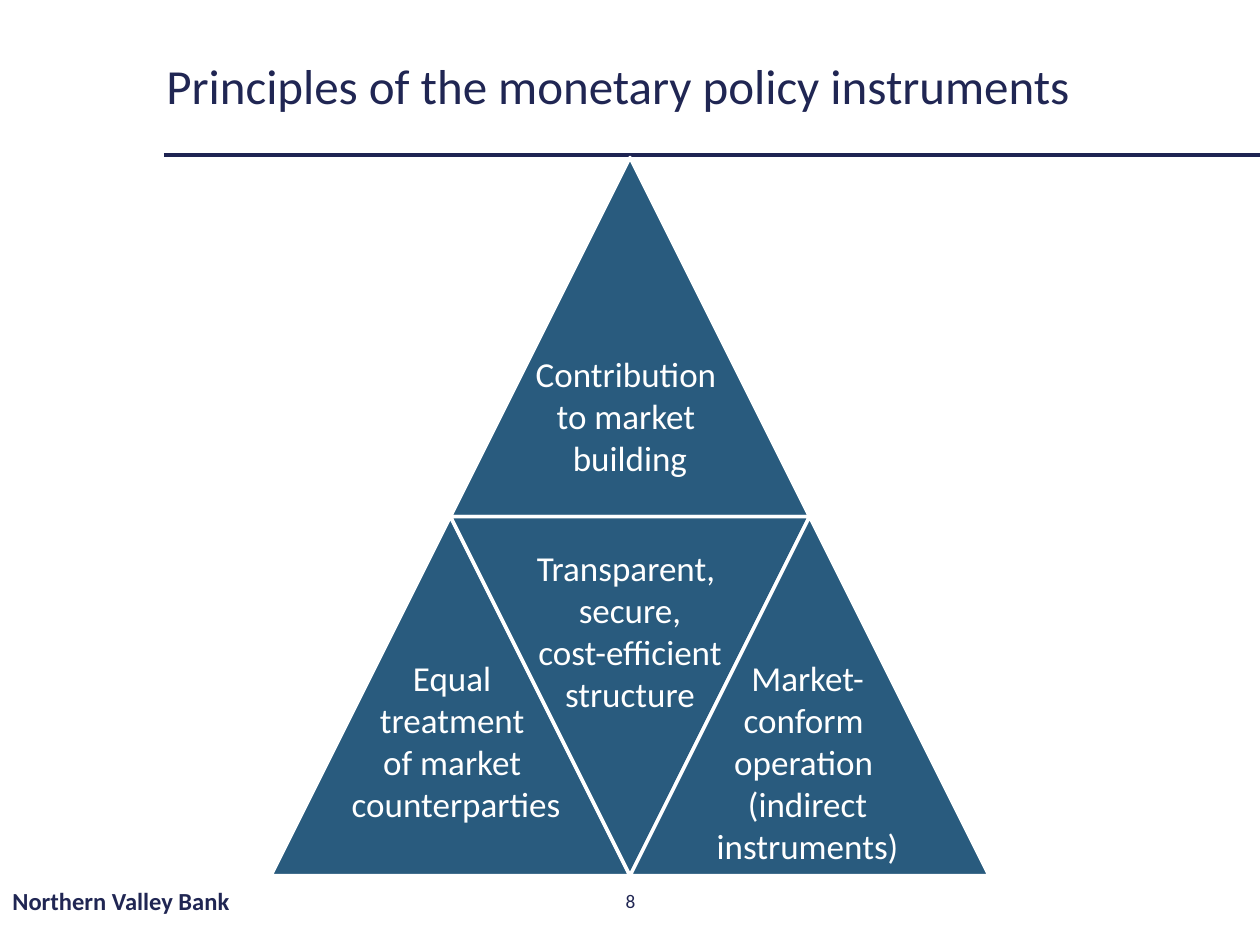
"""Build the slide on the principles of the monetary policy instruments."""
import pptx
import pptx.dml.color
import pptx.enum.shapes
import pptx.enum.text
import pptx.oxml.ns
import pptx.util
from lxml import etree

Inches = pptx.util.Inches
Pt = pptx.util.Pt
ALIGN = pptx.enum.text.PP_ALIGN
ANCHOR = pptx.enum.text.MSO_ANCHOR
SHAPE = pptx.enum.shapes.MSO_SHAPE

NAVY = pptx.dml.color.RGBColor(0x20, 0x26, 0x53)
RULE = pptx.dml.color.RGBColor(0x1E, 0x24, 0x52)
BLUE = pptx.dml.color.RGBColor(0x29, 0x5B, 0x7E)
WHITE = pptx.dml.color.RGBColor(0xFF, 0xFF, 0xFF)


class PrinciplesSlide:
    font_name = "Calibri"

    def __init__(self, deck):
        self.slide = deck.slides.add_slide(deck.slide_layouts[5])

    def fill_text(self, frame, paragraphs, size, color, align, anchor, bold=False, spacing=None):
        for name, value in {"word_wrap": True, "vertical_anchor": anchor}.items():
            setattr(frame, name, value)
        for index, lines in enumerate(paragraphs):
            paragraph = frame.add_paragraph() if index else frame.paragraphs[0]
            paragraph.alignment = align
            paragraph.line_spacing = spacing
            for number, line in enumerate(lines):
                if number:
                    paragraph.add_line_break()
                run = paragraph.add_run()
                run.text = line
                style = {"name": self.font_name, "size": Pt(size), "bold": bold}
                for name, value in style.items():
                    setattr(run.font, name, value)
                run.font.color.rgb = color

    def title(self, text, left, top, width, height):
        heading = self.slide.shapes.title
        place = {"left": left, "top": top, "width": width, "height": height}
        for name, value in place.items():
            setattr(heading, name, Inches(value))
        heading.text_frame.auto_size = pptx.enum.text.MSO_AUTO_SIZE.NONE
        self.fill_text(heading.text_frame, [[text]], 28, NAVY, ALIGN.LEFT, ANCHOR.MIDDLE,
                       spacing=0.9)

    def rule(self, left, right, top):
        rule = self.slide.shapes.add_connector(
            pptx.enum.shapes.MSO_CONNECTOR.STRAIGHT,
            Inches(left), Inches(top), Inches(right), Inches(top))
        rule.line.color.rgb = RULE
        rule.line.width = Pt(2.25)
        etree.SubElement(rule.element.spPr, pptx.oxml.ns.qn("a:effectLst"))

    def triangle(self, left, top, side, rotation=0):
        triangle = self.slide.shapes.add_shape(
            SHAPE.ISOSCELES_TRIANGLE, Inches(left), Inches(top), Inches(side), Inches(side))
        triangle.rotation = rotation
        triangle.shadow.inherit = False
        triangle.fill.solid()
        triangle.fill.fore_color.rgb = BLUE
        triangle.line.color.rgb = WHITE
        triangle.line.width = Pt(2)

    def text(self, paragraphs, left, top, width, height, size=20, color=WHITE,
             align=ALIGN.CENTER, anchor=ANCHOR.TOP, bold=False):
        box = self.slide.shapes.add_textbox(
            Inches(left), Inches(top), Inches(width), Inches(height))
        self.fill_text(box.text_frame, paragraphs, size, color, align, anchor, bold)


def main():
    deck = pptx.Presentation()
    deck.slide_width = Inches(10)
    deck.slide_height = Inches(7.5)
    page = PrinciplesSlide(deck)

    page.rule(1.3, 10, 1.23)
    page.title("Principles of the monetary policy instruments", 1.22, 0.29, 9.02, 0.83)
    page.text([["Northern Valley Bank"]], 0, 6.95, 3.38, 0.4, size=14, color=NAVY,
              align=ALIGN.LEFT, anchor=ANCHOR.MIDDLE, bold=True)
    page.text([["8"]], 3.88, 6.95, 2.25, 0.4, size=11, color=NAVY, anchor=ANCHOR.MIDDLE)

    side, center, apex = 2.85, 5, 1.25
    for column, row, rotation in [(-0.5, 0, 0), (-1, 1, 0), (-0.5, 1, 180), (0, 1, 0)]:
        page.triangle(center + column * side, apex + row * side, side, rotation)

    principles = [
        ([["Transparent, ", "secure,"], ["cost-efficient structure"]], 3.7, 4.29, 1.45),
        ([["Equal ", "treatment ", "of market ", "counterparties"]], 2.32, 5.16, 1.45),
        ([["Market-", "conform ", "operation ", "(indirect instruments)"]], 5.11, 5.16, 1.78),
        ([["Contribution ", "to market ", "building"]], 3.7, 2.75, 1.11),
    ]
    for paragraphs, left, top, height in principles:
        page.text(paragraphs, left, top, 2.6, height)

    deck.save("out.pptx")


if __name__ == "__main__":
    main()
